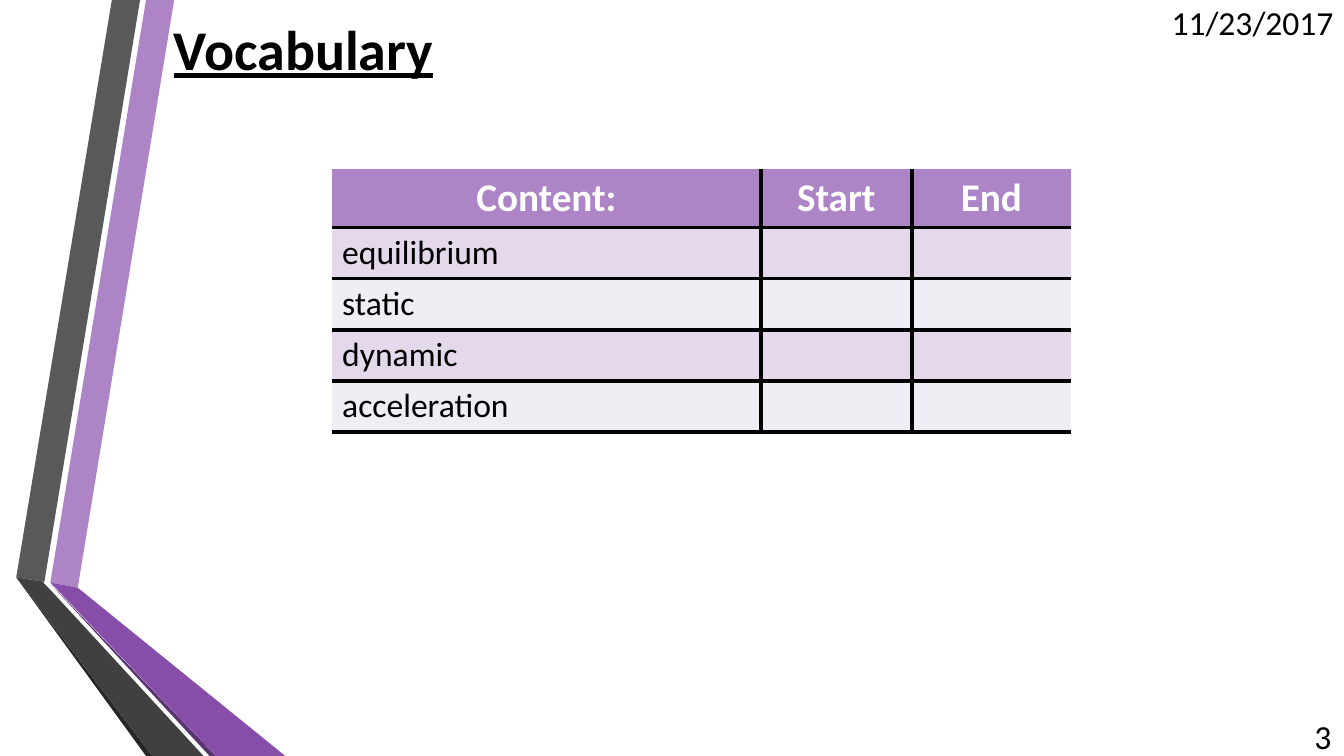
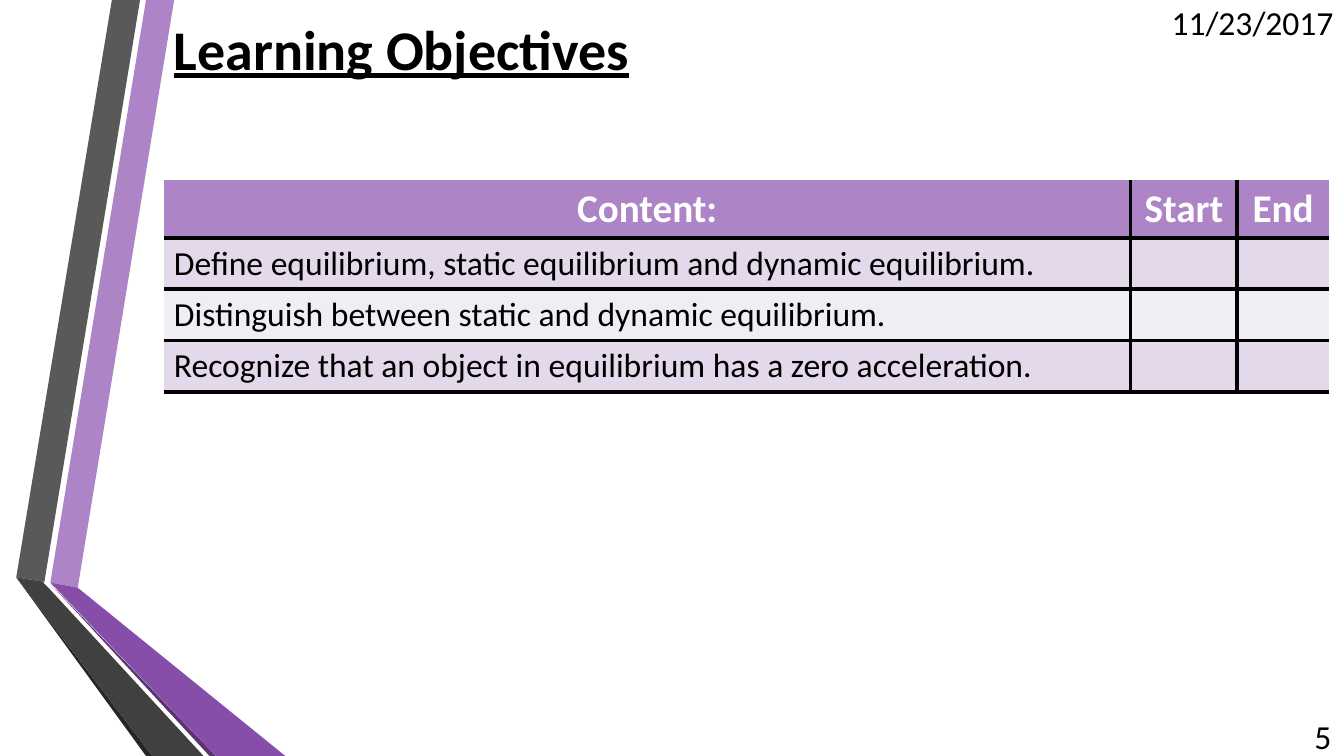
import dataclasses

import lxml.etree
import pptx
import pptx.dml.color
import pptx.enum.text
import pptx.oxml.ns
import pptx.util

Cm = pptx.util.Cm
ALIGN = pptx.enum.text.PP_ALIGN
ANCHOR = pptx.enum.text.MSO_ANCHOR


@dataclasses.dataclass(frozen=True)
class Theme:
    font: str = "Calibri"
    black: str = "000000"
    white: str = "FFFFFF"
    lilac: str = "AD84C6"
    purple: str = "874EA9"
    deep_purple: str = "5A3471"
    grey: str = "595959"
    dark_grey: str = "404040"
    charcoal: str = "262626"
    row_fills: tuple = ("E3D9EA", "F1EDF5")
    title_size: int = 40
    header_size: int = 28
    text_size: int = 24
    border: float = 3


theme = Theme()


def add_run(p, text, size, color=theme.black, bold=False, underline=False):
    r = p.add_run()
    r.text = text
    r.font.name = theme.font
    r.font.size = pptx.util.Pt(size)
    r.font.bold = bold
    r.font.underline = underline
    r.font.color.rgb = pptx.dml.color.RGBColor.from_string(color)


def set_border(cell, side, visible):
    qn = pptx.oxml.ns.qn
    tcPr = cell._tc.get_or_add_tcPr()
    ln = lxml.etree.SubElement(tcPr, qn("a:ln" + side))
    if visible:
        ln.set("w", str(pptx.util.Pt(theme.border)))
        fill = lxml.etree.SubElement(ln, qn("a:solidFill"))
        lxml.etree.SubElement(fill, qn("a:srgbClr")).set("val", theme.black)
    else:
        lxml.etree.SubElement(ln, qn("a:noFill"))


prs = pptx.Presentation()
prs.slide_width, prs.slide_height = Cm(33.87), Cm(19.05)

# Shared layout: title position
layout = prs.slide_layouts.get_by_name("Title Only")
title = layout.placeholders[0]
title.left, title.top, title.width, title.height = Cm(4.13), Cm(0.03), Cm(27.84), Cm(2.34)
title.text_frame.vertical_anchor = ANCHOR.MIDDLE
title.text_frame.auto_size = pptx.enum.text.MSO_AUTO_SIZE.NONE

# Shared folded ribbons, corner points in cm
ribbons = [
    (theme.lilac, [(1.27, 14.68), (1.96, 14.81), (4.39, 0), (3.68, 0)]),
    (theme.grey, [(3.53, 0), (2.82, 0), (0.41, 14.55), (1.12, 14.66)]),
    (theme.charcoal, [(0.41, 14.55), (3.68, 19.05), (3.84, 19.05)]),
    (theme.deep_purple, [(1.27, 14.71), (5.28, 19.05), (5.44, 19.05)]),
    (theme.purple, [(1.27, 14.68), (5.44, 19.05), (7.19, 19.05), (1.96, 14.81)]),
    (theme.dark_grey, [(5.13, 19.05), (1.22, 14.81), (1.09, 14.68), (1.12, 14.66),
                       (0.41, 14.55), (3.84, 19.05)]),
]

# Slide content: title, number, table corner, column widths, rows
header = ["Content:", "Start", "End"]
contents = [
    ("Vocabulary", "3", (8.37, 4.27), (10.8, 3.81, 4.01),
     ["equilibrium", "static", "dynamic", "acceleration"]),
    ("Learning Objectives", "5", (4.13, 4.54), (24.36, 2.69, 2.31),
     ["Define equilibrium, static equilibrium and dynamic equilibrium.",
      "Distinguish between static and dynamic equilibrium.",
      "Recognize that an object in equilibrium has a zero acceleration."]),
]
header_height, row_height = 1.46, 1.29

for heading, number, (left, top), widths, items in contents:
    s = prs.slides.add_slide(layout)

    # Ribbons, placed behind the title
    for color, corners in ribbons:
        points = [(Cm(x), Cm(y)) for x, y in corners]
        builder = s.shapes.build_freeform(*points[0])
        builder.add_line_segments(points[1:], close=True)
        sp = builder.convert_to_shape()
        sp.shadow.inherit = False
        sp.fill.solid()
        sp.fill.fore_color.rgb = pptx.dml.color.RGBColor.from_string(color)
        sp.line.fill.background()
        s.shapes.title.element.addprevious(sp.element)

    # Title
    p = s.shapes.title.text_frame.paragraphs[0]
    p.alignment = ALIGN.LEFT
    add_run(p, heading, theme.title_size, bold=True, underline=True)

    # Date and slide number
    for text, x, y, width in [("11/23/2017", 28.83, 0.05, 5.03),
                              (number, 31.95, 18.03, 1.85)]:
        tf = s.shapes.add_textbox(Cm(x), Cm(y), Cm(width), Cm(1.02)).text_frame
        tf.word_wrap = True
        tf.vertical_anchor = ANCHOR.MIDDLE
        p = tf.paragraphs[0]
        p.alignment = ALIGN.RIGHT
        add_run(p, text, theme.text_size)

    # Table
    rows = [header] + [[item, "", ""] for item in items]
    height = header_height + row_height * len(items)
    table = s.shapes.add_table(len(rows), len(header), Cm(left), Cm(top),
                               Cm(sum(widths)), Cm(height)).table
    for column, width in zip(table.columns, widths):
        column.width = Cm(width)
    for n, row in enumerate(rows):
        is_header = n == 0
        table.rows[n].height = Cm(header_height if is_header else row_height)
        color = theme.lilac if is_header else theme.row_fills[(n - 1) % 2]
        for m, text in enumerate(row):
            cell = table.cell(n, m)
            # Rules between cells and below the table, none on the other outer edges
            set_border(cell, "L", m > 0)
            set_border(cell, "R", m < len(row) - 1)
            set_border(cell, "T", n > 0)
            set_border(cell, "B", True)
            cell.fill.solid()
            cell.fill.fore_color.rgb = pptx.dml.color.RGBColor.from_string(color)
            p = cell.text_frame.paragraphs[0]
            if is_header:
                cell.vertical_anchor = ANCHOR.MIDDLE
                p.alignment = ALIGN.CENTER
                add_run(p, text, theme.header_size, theme.white, bold=True)
            elif text:
                add_run(p, text, theme.text_size)

prs.save("out.pptx")
